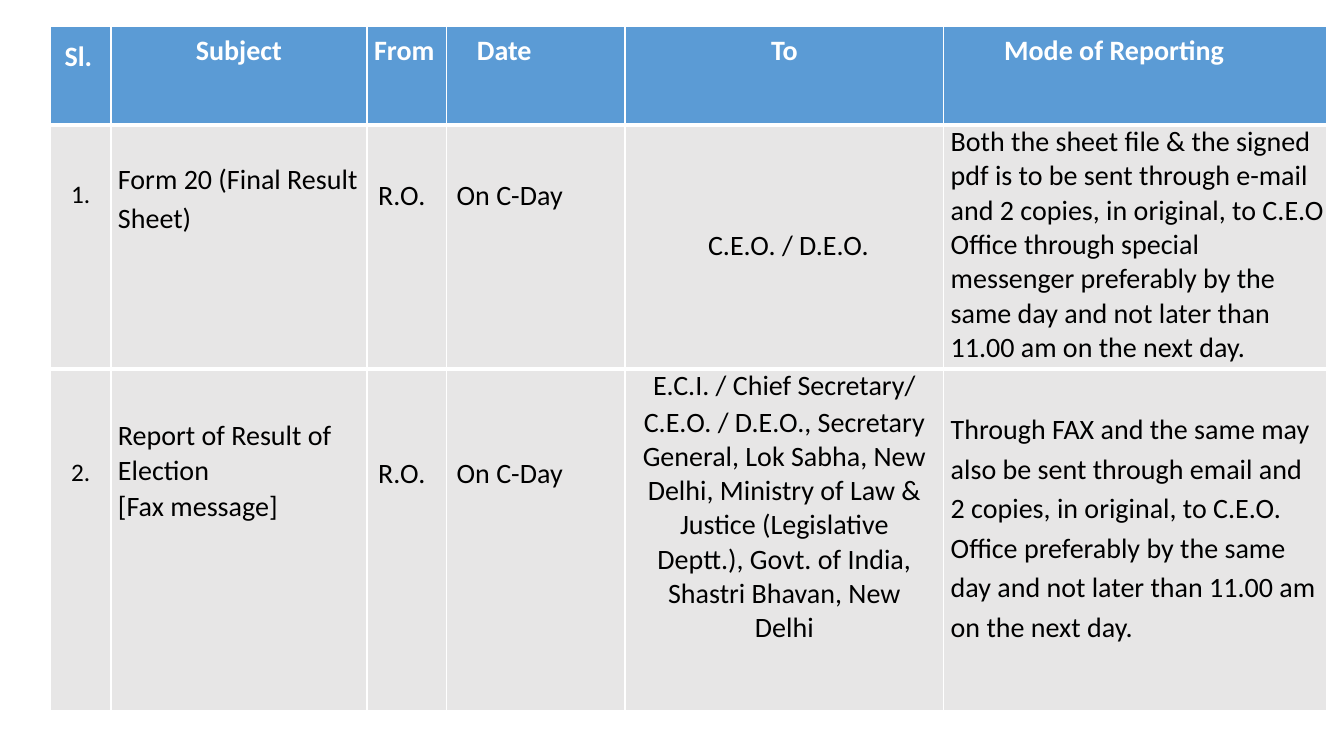
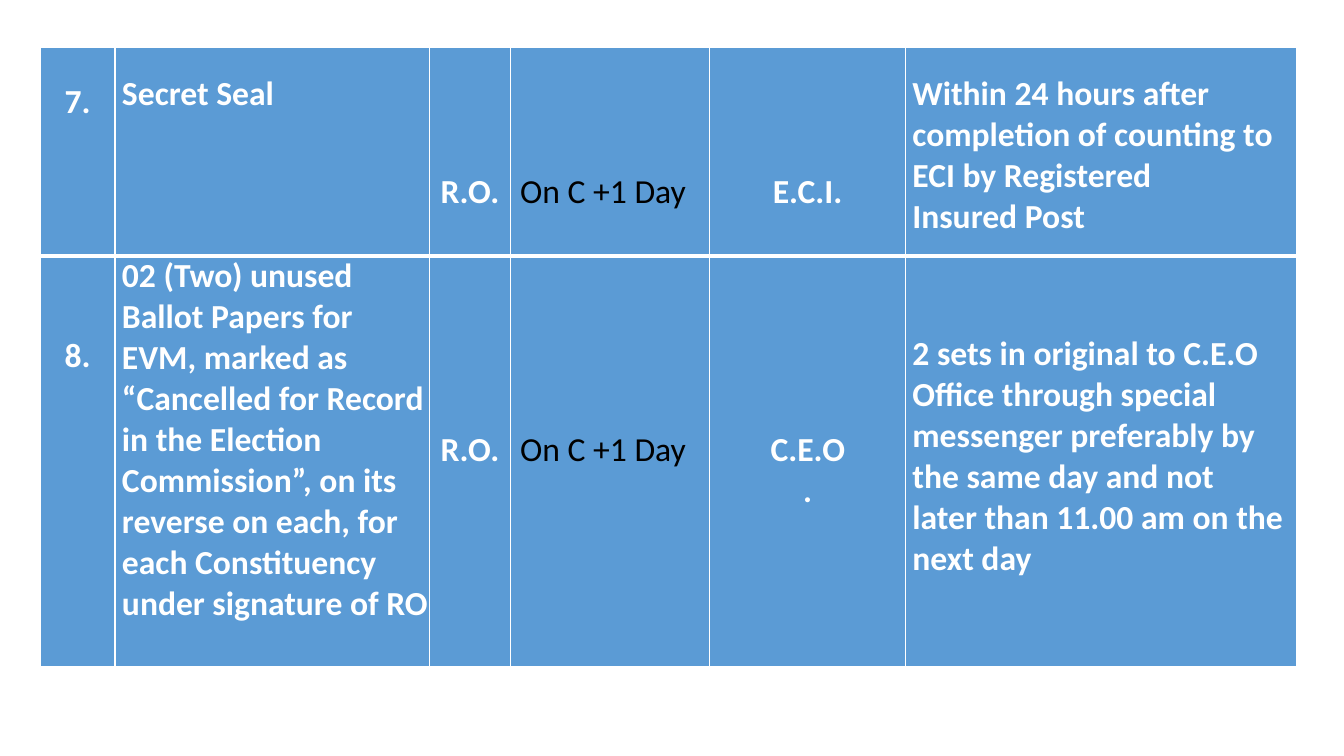
from pptx import Presentation
from pptx.dml.color import RGBColor
from pptx.enum.text import PP_ALIGN
from pptx.oxml import parse_xml
from pptx.oxml.ns import nsdecls
from pptx.util import Inches, Pt

COLORS = {"blue": "5B9BD5", "gray": "E7E6E6", "white": "FFFFFF", "black": "000000"}
FONT = "Calibri"
THIN, THICK = 1, 3


def write(cell, text, size=20, color="black", bold=False, top=0, left=0.07,
          right=0, center=False, spacing=1.0, before=0):
    cell.margin_left = cell.margin_right = cell.margin_bottom = 0
    cell.margin_top = Inches(top)
    tf = cell.text_frame
    for i, line in enumerate(text.split("\n")):
        p = tf.add_paragraph() if i else tf.paragraphs[0]
        p.alignment = PP_ALIGN.CENTER if center else PP_ALIGN.LEFT
        p.line_spacing = spacing
        p.space_before = Pt(before if i else 0)
        pPr = p._p.get_or_add_pPr()
        pPr.set("marL", str(Inches(left)))
        pPr.set("marR", str(Inches(right)))
        pPr.set("indent", "0")
        r = p.add_run()
        r.text = line
        r.font.name = FONT
        r.font.size = Pt(size)
        r.font.bold = bold
        r.font.color.rgb = RGBColor.from_string(COLORS[color])


def paint(cell, fill, top, bottom):
    tcPr = cell._tc.get_or_add_tcPr()
    for side, width in (("L", THIN), ("R", THIN), ("T", top), ("B", bottom)):
        tcPr.append(parse_xml(
            f'<a:ln{side} {nsdecls("a")} w="{Pt(width)}"><a:solidFill>'
            f'<a:srgbClr val="{COLORS["white"]}"/></a:solidFill></a:ln{side}>'))
    cell.fill.solid()
    cell.fill.fore_color.rgb = RGBColor.from_string(COLORS[fill])


def mid(indent):
    return dict(left=indent, right=indent, center=True)


HEAD = dict(color="white", bold=True, top=0.08)
SEAL = dict(color="white", bold=True, size=24)
DAY = dict(size=24, left=0.1)

TABLES = [
    dict(
        at=(0.5, 0.26),
        cols=[0.6, 2.54, 0.79, 1.77, 3.16, 3.8],
        rows=[0.98, 2.42, 3.39],
        fills=["blue", "gray", "gray"],
        cells=[
            [
                ("Sl.", {**HEAD, "top": 0.14, "left": 0.14}),
                ("Subject", {**HEAD, **mid(0.72)}),
                ("From", HEAD),
                ("Date", {**HEAD, "left": 0.3}),
                ("To", {**HEAD, **mid(0.69)}),
                ("Mode of Reporting", {**HEAD, "left": 0.6}),
            ],
            [
                ("1.", dict(size=18, top=0.54, **mid(0.15))),
                ("Form 20 (Final Result Sheet)", dict(top=0.32, spacing=1.15)),
                ("R.O.", dict(top=0.53, left=0.11)),
                ("On C-Day", dict(top=0.53, left=0.1)),
                ("C.E.O. / D.E.O.", dict(top=1.03, left=0.08, center=True)),
                ("Both the sheet file & the signed pdf is to be sent through e-mail "
                 "and 2 copies, in original, to C.E.O Office through special "
                 "messenger preferably by the same day and not later than "
                 "11.00 am on the next day.", {}),
            ],
            [
                ("2.", dict(size=18, top=0.88, **mid(0.15))),
                ("Report of Result of Election\n[Fax message]", dict(top=0.5, before=1.6)),
                ("R.O.", dict(top=0.87, left=0.11)),
                ("On C-Day", dict(top=0.87, left=0.1)),
                ("E.C.I. / Chief Secretary/\nC.E.O. / D.E.O., Secretary General, "
                 "Lok Sabha, New Delhi, Ministry of Law & Justice (Legislative "
                 "Deptt.), Govt. of India, Shastri Bhavan, New Delhi",
                 dict(before=1.6, **mid(0.13))),
                ("Through FAX and the same may also be sent through email and "
                 "2 copies, in original, to C.E.O. Office preferably by the same "
                 "day and not later than 11.00 am on the next day.",
                 dict(top=0.39, right=0.08, spacing=1.15)),
            ],
        ],
    ),
    dict(
        at=(0.4, 0.47),
        cols=[0.74, 3.12, 0.8, 1.98, 1.94, 3.88],
        rows=[2.07, 4.07],
        fills=["blue", "blue"],
        cells=[
            [
                ("7.", dict(top=0.34, **SEAL, **mid(0.15))),
                ("Secret Seal", dict(top=0.26, **SEAL)),
                ("R.O.", dict(top=1.23, left=0.11, **SEAL)),
                ("On C +1 Day", dict(top=1.23, **DAY)),
                ("E.C.I.", dict(top=1.23, **SEAL, **mid(0.6))),
                ("Within 24 hours after completion of counting to ECI by "
                 "Registered\nInsured Post", dict(top=0.26, **SEAL)),
            ],
            [
                ("8.", dict(top=0.79, **SEAL, **mid(0.15))),
                ("02 (Two) unused Ballot Papers for EVM, marked as “Cancelled for "
                 "Record in the Election Commission”, on its reverse on each, for "
                 "each Constituency under signature of RO", SEAL),
                ("R.O.", dict(top=1.72, left=0.11, **SEAL)),
                ("On C +1 Day", dict(top=1.72, **DAY)),
                ("C.E.O.", dict(top=1.72, **SEAL, **mid(0.58))),
                ("2 sets in original to C.E.O Office through special messenger "
                 "preferably by the same day and not\nlater than 11.00 am on the "
                 "next day", dict(top=0.77, **SEAL)),
            ],
        ],
    ),
]

prs = Presentation()
prs.slide_width, prs.slide_height = Inches(13.33), Inches(7.5)

for t in TABLES:
    s = prs.slides.add_slide(prs.slide_layouts[6])
    cols, rows = t["cols"], t["rows"]
    box = [Inches(v) for v in (*t["at"], sum(cols), sum(rows))]
    tbl = s.shapes.add_table(len(rows), len(cols), *box).table
    tbl.first_row = tbl.horz_banding = False
    for col, width in zip(tbl.columns, cols):
        col.width = Inches(width)
    for i, height in enumerate(rows):
        tbl.rows[i].height = Inches(height)
        top = THICK if i else THIN
        bottom = THICK if i < len(rows) - 1 else THIN
        for j, (text, style) in enumerate(t["cells"][i]):
            cell = tbl.cell(i, j)
            paint(cell, t["fills"][i], top, bottom)
            write(cell, text, **style)

prs.save("out.pptx")
